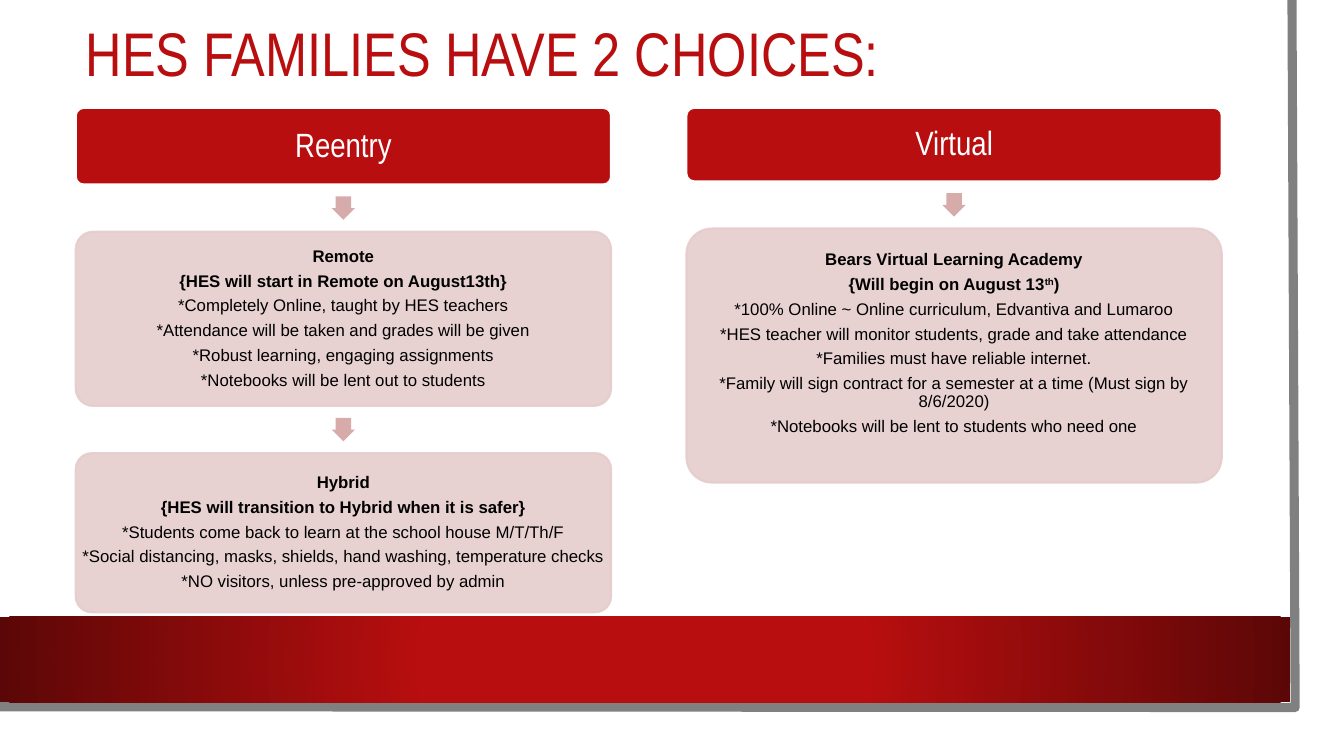
from lxml.etree import SubElement
from pptx import Presentation
from pptx.dml.color import RGBColor
from pptx.enum.shapes import MSO_SHAPE
from pptx.enum.text import MSO_ANCHOR, PP_ALIGN
from pptx.oxml import parse_xml
from pptx.oxml.ns import nsdecls, qn
from pptx.util import Cm, Pt

RED = RGBColor(0xB8, 0x0E, 0x0F)
DARK = RGBColor(0x5C, 0x07, 0x07)
PINK = RGBColor(0xE6, 0xCC, 0xCC)
ROSE = RGBColor(0xD8, 0xAB, 0xAB)
GREY = RGBColor(0x80, 0x80, 0x80)
WHITE = RGBColor(0xFF, 0xFF, 0xFF)
BLACK = RGBColor(0, 0, 0)

WIDTH, TOP = 13.49, 2.72
ARROW, GAP = 0.59, 0.3

REMOTE = [
    "Remote",
    "{HES will start in Remote on August13th}",
    "*Completely Online, taught by HES teachers",
    "*Attendance will be taken and grades will be given",
    "*Robust learning, engaging assignments",
    "*Notebooks will be lent out to students",
]
HYBRID = [
    "Hybrid",
    "{HES will transition to Hybrid when it is safer}",
    "*Students come back to learn at the school house M/T/Th/F",
    "*Social distancing, masks, shields, hand washing, temperature checks",
    "*NO visitors, unless pre-approved by admin",
]
ACADEMY = [
    "Bears Virtual Learning Academy",
    ("{Will begin on August 13", "th", ")"),
    "*100% Online ~ Online curriculum, Edvantiva and Lumaroo",
    "*HES teacher will monitor students, grade and take attendance",
    "*Families must have reliable internet.",
    "*Family will sign contract for a semester at a time (Must sign by 8/6/2020)",
    "*Notebooks will be lent to students who need one",
]


def add_run(para, text, size, color, font="Arial", bold=False):
    run = para.add_run()
    run.text = text
    run.font.name = font
    run.font.size = Pt(size)
    run.font.bold = bold
    run.font.color.rgb = color
    return run


def add_block(slide, kind, left, top, width, height, fill):
    block = slide.shapes.add_shape(kind, Cm(left), Cm(top), Cm(width), Cm(height))
    block.shadow.inherit = False
    block.fill.solid()
    block.fill.fore_color.rgb = fill
    block.line.fill.background()
    return block


def add_card(slide, left, top, height, fill, edge, foot=0):
    """Add a rounded box; foot is extra room kept free below its text."""
    card = add_block(slide, MSO_SHAPE.ROUNDED_RECTANGLE, left, top, WIDTH, height, fill)
    card.adjustments[0] = 0.1
    card.line.color.rgb = edge
    card.line.width = Pt(1.5)
    frame = card.text_frame
    frame.word_wrap = True
    frame.vertical_anchor = MSO_ANCHOR.MIDDLE
    frame.margin_left = frame.margin_right = frame.margin_top = Cm(0.04)
    frame.margin_bottom = Cm(0.04 + foot)
    return card


def add_head(slide, left, top, height, text):
    card = add_card(slide, left, top, height, RED, WHITE)
    para = card.text_frame.paragraphs[0]
    para.alignment = PP_ALIGN.CENTER
    para.line_spacing = 0.9
    add_run(para, text, 24, WHITE, "Arial Narrow")


def add_body(slide, left, top, height, lines, foot):
    card = add_card(slide, left, top, height, PINK, PINK, foot)
    for color in card._element.spPr.iter(qn("a:srgbClr")):
        SubElement(color, qn("a:alpha"), val="90000")
    frame = card.text_frame
    for i, line in enumerate(lines):
        para = frame.add_paragraph() if i else frame.paragraphs[0]
        para.alignment = PP_ALIGN.CENTER
        para.line_spacing = 0.9
        para.space_after = Pt(4.7)
        parts = (line,) if isinstance(line, str) else line
        for j, part in enumerate(parts):
            run = add_run(para, part, 12, BLACK, bold=i < 2)
            if j == 1:
                run.font._element.set("baseline", "30000")


def add_choice(slide, left, head, tall, bodies):
    """Stack a heading and its boxes, with an arrow above each box."""
    add_head(slide, left, TOP, tall, head)
    top = TOP + tall
    for lines, height, foot in bodies:
        arrow = add_block(slide, MSO_SHAPE.DOWN_ARROW, left + (WIDTH - ARROW) / 2,
                          top + GAP, ARROW, ARROW, ROSE)
        arrow.adjustments[0] = 0.667
        top += 2 * GAP + ARROW
        add_body(slide, left, top, height, lines, foot)
        top += height


def add_title(slide):
    title = slide.shapes.title
    title.left, title.top = Cm(1.91), Cm(0.76)
    title.width, title.height = Cm(28.88), Cm(1.35)
    title.text_frame.vertical_anchor = MSO_ANCHOR.MIDDLE
    para = title.text_frame.paragraphs[0]
    para.alignment = PP_ALIGN.LEFT
    para.line_spacing = 0.9
    add_run(para, "HES FAMILIES HAVE 2 CHOICES:", 44, RED, "Arial Narrow")


def add_frame(slide):
    """Draw the grey page edge and the red band at the foot."""
    pen = slide.shapes.build_freeform(Cm(32.56), Cm(0))
    pen.add_line_segments([(Cm(32.64), Cm(17.83)), (Cm(-0.08), Cm(17.81))], close=False)
    edge = pen.convert_to_shape()
    edge.shadow.inherit = False
    edge.fill.background()
    edge.line.color.rgb = GREY
    edge.line.width = Pt(6.5)

    band = add_block(slide, MSO_SHAPE.RECTANGLE, 0, 15.54, 32.51, 2.16, RED)
    fade = parse_xml(
        f'<a:gradFill {nsdecls("a")} rotWithShape="1"><a:gsLst>'
        f'<a:gs pos="34000"><a:srgbClr val="{RED}"/></a:gs>'
        f'<a:gs pos="100000"><a:srgbClr val="{DARK}"/></a:gs></a:gsLst>'
        '<a:path path="circle">'
        '<a:fillToRect l="50000" t="50000" r="50000" b="50000"/></a:path></a:gradFill>')
    props = band._element.spPr
    props.replace(props.find(qn("a:solidFill")), fade)


def main():
    deck = Presentation()
    deck.slide_width, deck.slide_height = Cm(33.87), Cm(19.05)
    slide = deck.slides.add_slide(deck.slide_layouts[5])
    add_frame(slide)
    add_title(slide)
    add_choice(slide, 1.91, "Reentry", 1.93, [(REMOTE, 4.39, 0), (HYBRID, 4.01, 0)])
    add_choice(slide, 17.3, "Virtual", 1.85, [(ACADEMY, 6.4, 0.6)])
    deck.save("out.pptx")


if __name__ == "__main__":
    main()
